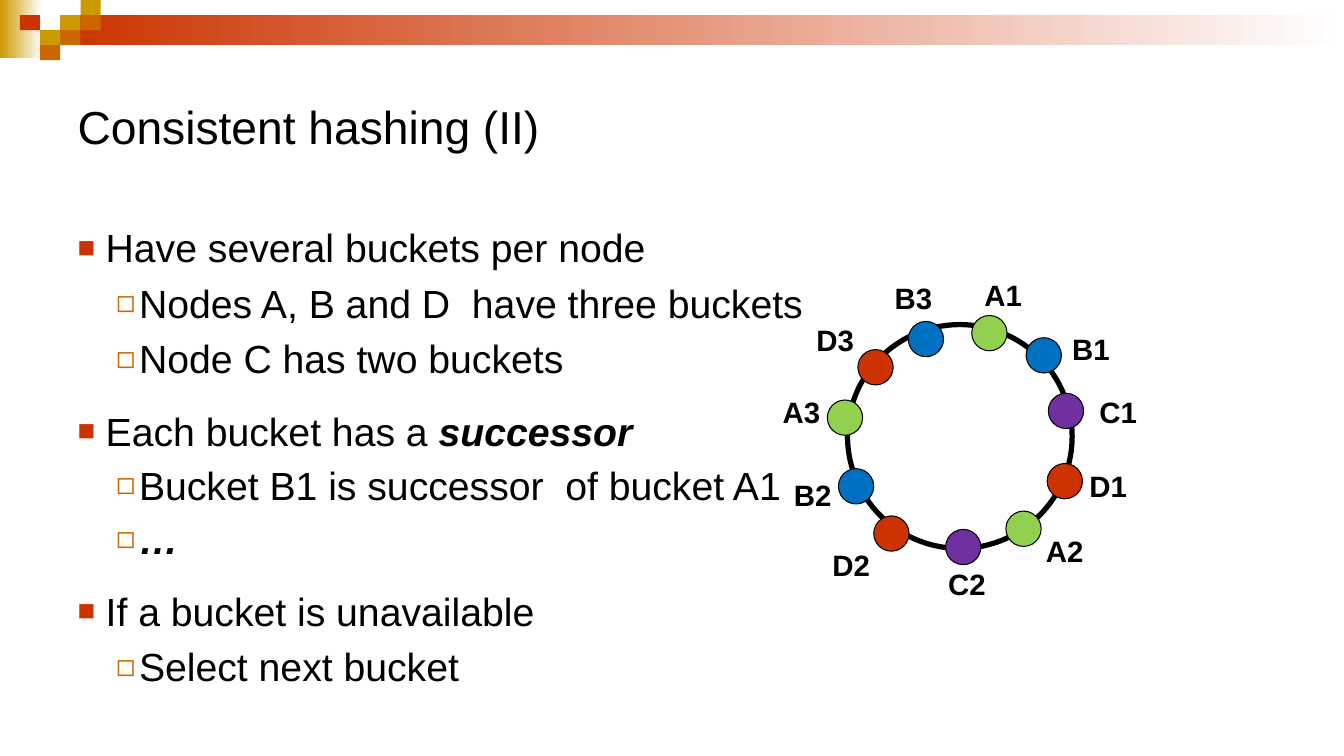
from lxml import etree
from pptx import Presentation
from pptx.dml.color import RGBColor
from pptx.enum.shapes import MSO_SHAPE
from pptx.enum.text import MSO_ANCHOR, MSO_AUTO_SIZE, PP_ALIGN
from pptx.oxml.ns import qn
from pptx.util import Cm, Pt

RECT, OVAL = MSO_SHAPE.RECTANGLE, MSO_SHAPE.OVAL
TOP, MIDDLE = MSO_ANCHOR.TOP, MSO_ANCHOR.MIDDLE
LEFT, CENTER = PP_ALIGN.LEFT, PP_ALIGN.CENTER
NO_FIT = MSO_AUTO_SIZE.NONE

BLACK = RGBColor(0x00, 0x00, 0x00)
WHITE = RGBColor(0xFF, 0xFF, 0xFF)
GOLD = RGBColor(0xCC, 0x99, 0x00)
ORANGE = RGBColor(0xCC, 0x66, 0x00)
RED = RGBColor(0xCC, 0x33, 0x00)
GREEN = RGBColor(0x92, 0xD0, 0x50)
BLUE = RGBColor(0x00, 0x70, 0xC0)
PURPLE = RGBColor(0x70, 0x30, 0xA0)

# Content
TITLE = "Consistent hashing (II)"
BODY = [  # level, space before (pt), plain text, bold italic text
    (0, 6, "Have several buckets per node", ""),
    (1, 6, "Nodes A, B and D  have three buckets", ""),
    (1, 6, "Node C has two buckets", ""),
    (0, 18, "Each bucket has a ", "successor"),
    (1, 5, "Bucket B1 is successor  of bucket A1", ""),
    (1, 5, "", "…"),
    (0, 18, "If a bucket is unavailable", ""),
    (1, 6, "Select next bucket", ""),
]
BULLETS = [  # character, colour, size %, text indent, hanging (cm)
    ("■", RED, 75, 0.71, 0.71),
    ("◻", ORANGE, 80, 1.55, 0.58),
]
NODE_COLORS = {"A": GREEN, "B": BLUE, "C": PURPLE, "D": RED}
BUCKETS = [  # name, dot left and top, label left and top (cm), clockwise
    ("A1", 24.49, 7.95, 24.38, 6.86),
    ("B1", 25.86, 8.51, 26.59, 8.23),
    ("C1", 26.42, 9.91, 27.28, 9.8),
    ("D1", 26.39, 11.68, 27.03, 11.68),
    ("A2", 25.35, 12.88, 25.93, 13.31),
    ("C2", 23.83, 13.34, 23.47, 14.15),
    ("D2", 22.02, 13, 20.55, 13.67),
    ("B2", 21.13, 11.81, 19.58, 11.89),
    ("A3", 20.85, 10.08, 19.3, 9.8),
    ("D3", 21.62, 8.81, 20.15, 7.98),
    ("B3", 22.89, 8.1, 22.12, 6.93),
]
RING = (21.36, 8.18, 5.66, 5.64)
DOT = 0.89
LABEL_W, LABEL_H = 1.8, 1.14
BANDS = [((0, 0, 1.07, 1.47), GOLD), ((1.52, 0.38, 32.35, 0.76), RED)]
TILES = [(2, 1, GOLD), (3, 0, GOLD), (3, 1, ORANGE), (1, 2, GOLD),
         (0, 1, RED), (2, 2, ORANGE), (1, 3, ORANGE)]  # column, row, colour
TILE_LEFT, TILE_W, TILE_H = 0.5, 0.51, 0.38


def box(values):
    return [Cm(v) for v in values]


def add_shape(s, kind, place, fill=None, line=None):
    sp = s.shapes.add_shape(kind, *box(place))
    sp.shadow.inherit = False
    if fill is None:
        sp.fill.background()
    else:
        sp.fill.solid()
        sp.fill.fore_color.rgb = fill
    if line is None:
        sp.line.fill.background()
    else:
        sp.line.color.rgb = BLACK
        sp.line.width = Pt(line)
    return sp


def add_run(p, text, size, **extra):
    r = p.add_run()
    r.text = text
    for name, value in {"name": "Arial", "size": Pt(size), **extra}.items():
        setattr(r.font, name, value)
    r.font.color.rgb = BLACK


def place_text(sp, place, anchor):
    sp.left, sp.top, sp.width, sp.height = box(place)
    tf = sp.text_frame
    for name, value in {"word_wrap": True, "auto_size": NO_FIT,
                        "vertical_anchor": anchor}.items():
        setattr(tf, name, value)
    return tf


def set_bullet(p, level):
    char, color, percent, indent, hanging = BULLETS[level]
    pPr = p._p.get_or_add_pPr()
    pPr.set("marL", str(Cm(indent)))
    pPr.set("indent", str(-Cm(hanging)))
    clr = etree.SubElement(pPr, qn("a:buClr"))
    etree.SubElement(clr, qn("a:srgbClr"), val=str(color))
    etree.SubElement(pPr, qn("a:buSzPct"), val=str(percent * 1000))
    etree.SubElement(pPr, qn("a:buFont"), typeface="Arial")
    etree.SubElement(pPr, qn("a:buChar"), char=char)


def main():
    prs = Presentation()
    prs.slide_width, prs.slide_height = Cm(33.87), Cm(19.05)
    s = prs.slides.add_slide(prs.slide_layouts[1])

    # Header bands and tiles
    for place, color in BANDS:
        sp = add_shape(s, RECT, place)
        sp.fill.gradient()
        sp.fill.gradient_angle = 0
        for stop, rgb in zip(sp.fill.gradient_stops, (color, WHITE)):
            stop.color.rgb = rgb
    for col, row, color in TILES:
        add_shape(s, RECT, (TILE_LEFT + col * TILE_W, row * TILE_H,
                            TILE_W, TILE_H), color)

    # Title
    tf = place_text(s.shapes.title, (1.7, 1.27, 30.48, 3.81), MIDDLE)
    p = tf.paragraphs[0]
    p.alignment = LEFT
    add_run(p, TITLE, 33)

    # Bulleted list
    tf = place_text(s.placeholders[1], (1.7, 5.51, 30.48, 12.88), TOP)
    for i, (level, before, plain, strong) in enumerate(BODY):
        p = tf.add_paragraph() if i else tf.paragraphs[0]
        p.level = level
        p.space_before = Pt(before)
        set_bullet(p, level)
        if plain:
            add_run(p, plain, 28)
        if strong:
            add_run(p, strong, 28, bold=True, italic=True)

    # Hash ring with its buckets
    add_shape(s, OVAL, RING, line=3.75)
    for name, x, y, label_x, label_y in BUCKETS:
        add_shape(s, OVAL, (x, y, DOT, DOT), NODE_COLORS[name[0]], 0.75)
        place = (label_x, label_y, LABEL_W, LABEL_H)
        tf = place_text(s.shapes.add_textbox(*box(place)), place, TOP)
        p = tf.paragraphs[0]
        p.alignment = CENTER
        add_run(p, name, 21, bold=True)

    prs.save("out.pptx")


if __name__ == "__main__":
    main()
